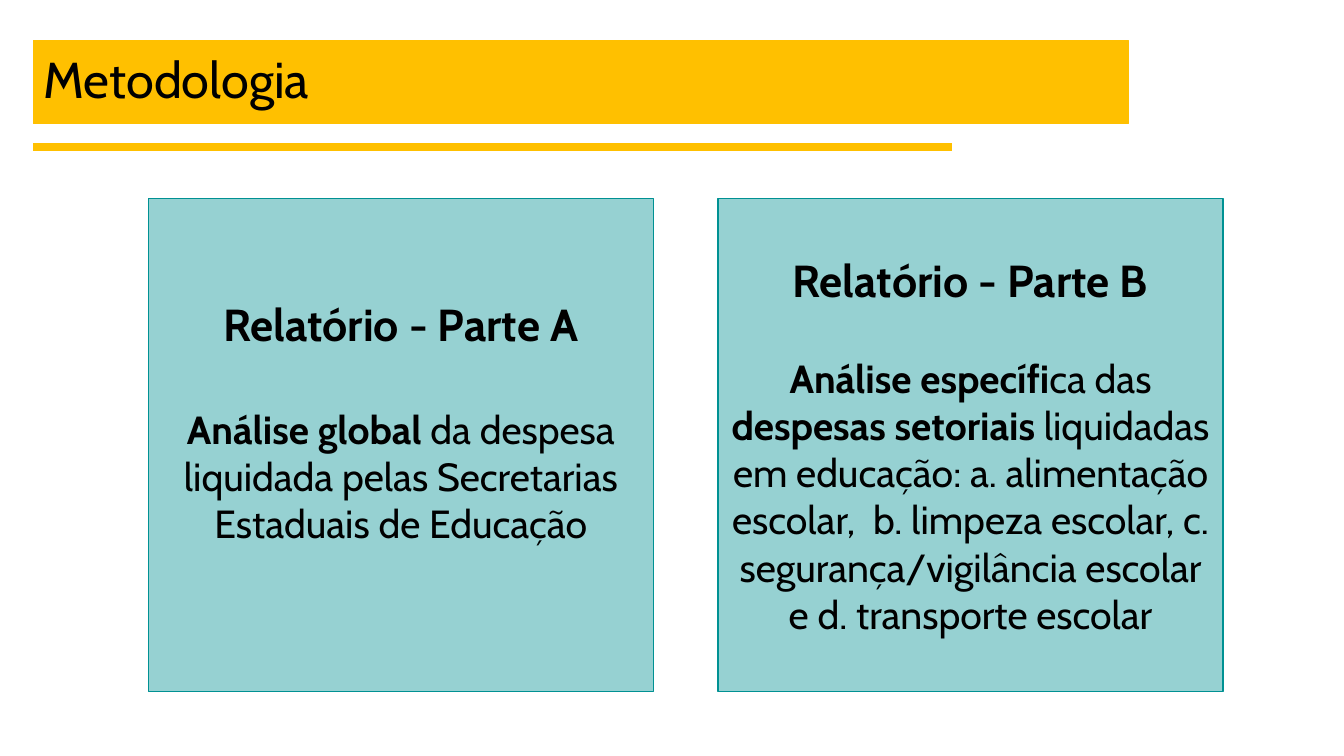
import pptx
import pptx.util
import pptx.dml.color
import pptx.enum.shapes
import pptx.enum.text
import lxml.etree
from pptx.util import Inches

COLORS = {"amber": "FFC000", "teal": "009193", "text": "000000"}
FONT = "Cabin"


def color(name):
    return pptx.dml.color.RGBColor.from_string(COLORS[name])


def add_spans(para, spans, size):
    for text, bold in spans:
        span = para.add_run()
        span.text = text
        span.font.name = FONT
        span.font.size = pptx.util.Pt(size)
        span.font.bold = bold
        span.font.color.rgb = color("text")


deck = pptx.Presentation()
deck.slide_width = Inches(13.33)
deck.slide_height = Inches(7.5)
page = deck.slides.add_slide(deck.slide_layouts[5])

rule = page.shapes.add_connector(
    pptx.enum.shapes.MSO_CONNECTOR.STRAIGHT,
    Inches(0.33), Inches(1.46), Inches(9.44), Inches(1.46))
rule.line.color.rgb = color("amber")
rule.line.width = pptx.util.Pt(6)
lxml.etree.SubElement(rule._element.spPr, pptx.oxml.ns.qn("a:effectLst"))

title = page.shapes.title
title.left, title.top = Inches(0.33), Inches(0.4)
title.width, title.height = Inches(10.86), Inches(0.83)
title.fill.solid()
title.fill.fore_color.rgb = color("amber")
title.line.color.rgb = color("amber")
title.line.width = pptx.util.Pt(0.75)
title.text_frame.vertical_anchor = pptx.enum.text.MSO_ANCHOR.MIDDLE
title.text_frame.auto_size = pptx.enum.text.MSO_AUTO_SIZE.NONE
title_para = title.text_frame.paragraphs[0]
title_para.alignment = pptx.enum.text.PP_ALIGN.LEFT
title_para.line_spacing = 0.9
add_spans(title_para, [("Metodologia", False)], 36)

reports = [
    ("Relatório - Parte A", 39, 0.52, [
        ("Análise global ", True),
        ("da despesa liquidada pelas Secretarias Estaduais de Educação", False)]),
    ("Relatório - Parte B", 34, 0.05, [
        ("Análise específi", True),
        ("ca das ", False),
        ("despesas setoriais ", True),
        ("liquidadas em educação: a. alimentação escolar,  b. limpeza escolar, "
         "c. segurança/vigilância escolar e d. transporte escolar", False)]),
]

for column, (heading, gap, bottom_margin, body) in enumerate(reports):
    box = page.shapes.add_shape(
        pptx.enum.shapes.MSO_SHAPE.RECTANGLE,
        Inches(1.47 + column * 5.65), Inches(1.97), Inches(5.01), Inches(4.89))
    box.shadow.inherit = False
    box.fill.solid()
    box.fill.fore_color.rgb = color("teal")
    fill_color = box._element.spPr.find(".//" + pptx.oxml.ns.qn("a:srgbClr"))
    lxml.etree.SubElement(fill_color, pptx.oxml.ns.qn("a:alpha"), val="41000")
    box.line.color.rgb = color("teal")
    box.line.width = pptx.util.Pt(1)

    frame = box.text_frame
    frame.word_wrap = True
    frame.vertical_anchor = pptx.enum.text.MSO_ANCHOR.MIDDLE
    frame.margin_bottom = Inches(bottom_margin)
    heading_para = frame.paragraphs[0]
    add_spans(heading_para, [(heading, True)], 32)
    body_para = frame.add_paragraph()
    body_para.space_before = pptx.util.Pt(gap)
    add_spans(body_para, body, 28)
    for para in frame.paragraphs:
        para.alignment = pptx.enum.text.PP_ALIGN.CENTER

deck.save("out.pptx")
